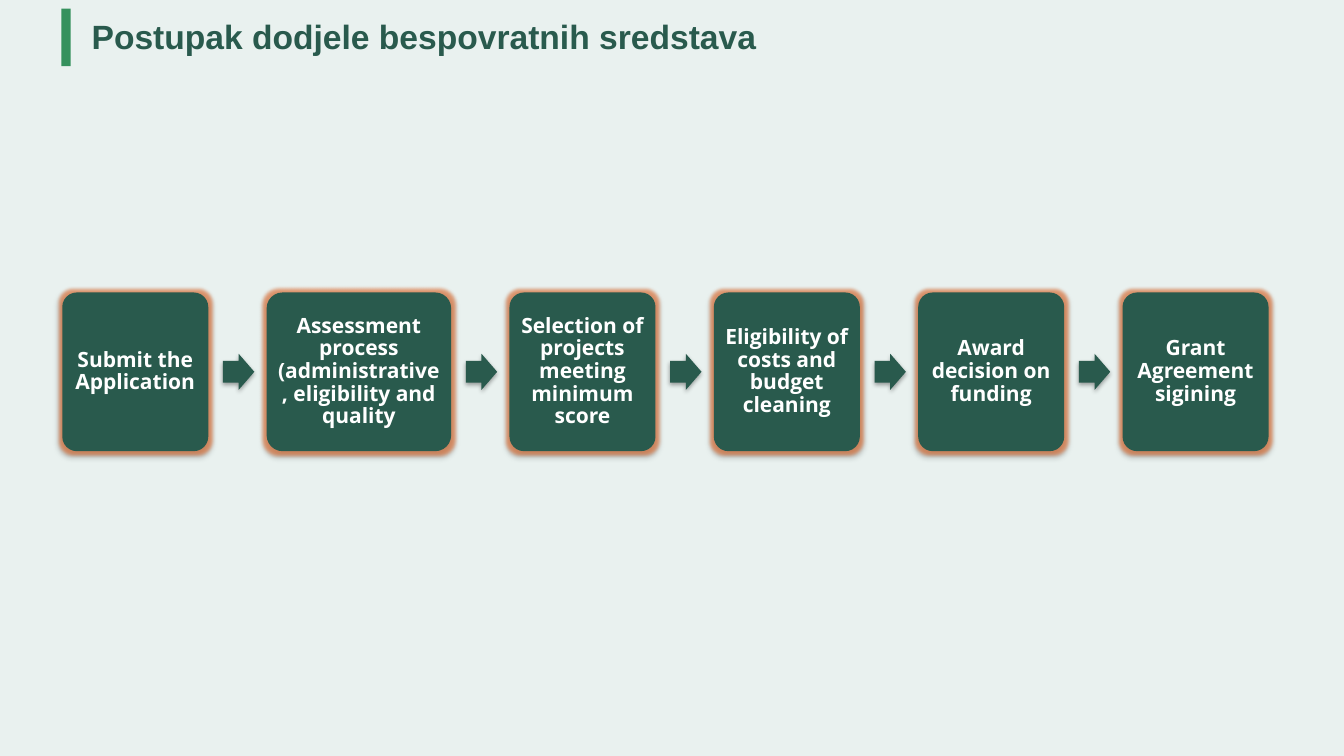
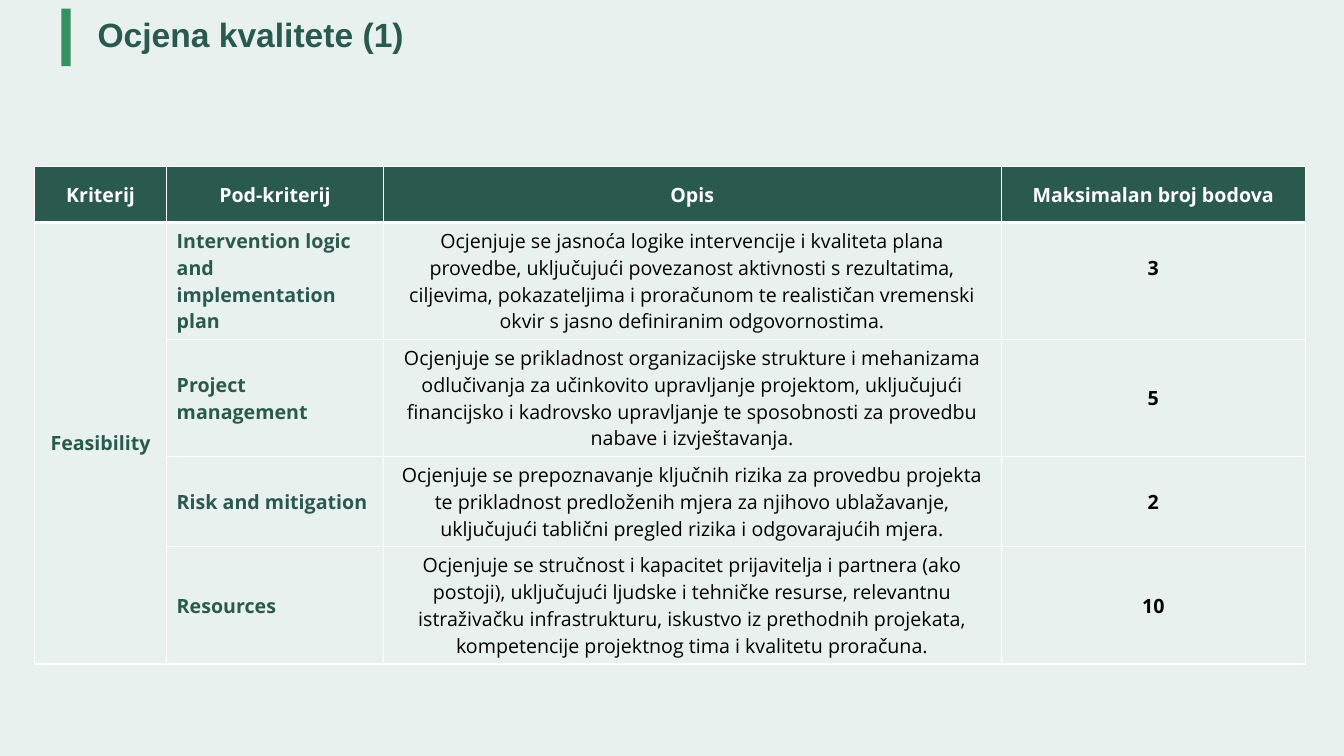
from lxml import etree
from pptx import Presentation
from pptx.dml.color import RGBColor
from pptx.enum import shapes, text
from pptx.oxml import ns
from pptx.util import Cm, Pt

PAPER = RGBColor(0xE9, 0xF1, 0xEF)
PINE = RGBColor(0x29, 0x5A, 0x4D)
GREEN = RGBColor(0x35, 0x91, 0x5D)
ORANGE = RGBColor(0xE9, 0x71, 0x32)
WHITE = RGBColor(0xFF, 0xFF, 0xFF)
BLACK = RGBColor(0, 0, 0)

TITLE_FONT, BODY_FONT = "Arial", "Open Sans"
CENTER, LEFT = text.PP_ALIGN.CENTER, text.PP_ALIGN.LEFT

STEPS = [
    "Submit the Application",
    "Assessment process (administrative, eligibility and quality",
    "Selection of projects meeting minimum score",
    "Eligibility of costs and budget cleaning",
    "Award decision on funding",
    "Grant Agreement sigining",
]
STEP_WIDTHS = [3.68, 4.65, 3.68, 3.68, 3.68, 3.68]

HEADINGS = ["Kriterij", "Pod-kriterij", "Opis", "Maksimalan broj bodova"]
CRITERION = "Feasibility"
SUBCRITERIA = [
    ("Intervention logic and implementation plan",
     "Ocjenjuje se jasnoća logike intervencije i kvaliteta plana provedbe, "
     "uključujući povezanost aktivnosti s rezultatima, ciljevima, pokazateljima "
     "i proračunom te realističan vremenski okvir s jasno definiranim "
     "odgovornostima.", "3"),
    ("Project management",
     "Ocjenjuje se prikladnost organizacijske strukture i mehanizama odlučivanja "
     "za učinkovito upravljanje projektom, uključujući financijsko i kadrovsko "
     "upravljanje te sposobnosti za provedbu nabave i izvještavanja.", "5"),
    ("Risk and mitigation",
     "Ocjenjuje se prepoznavanje ključnih rizika za provedbu projekta te "
     "prikladnost predloženih mjera za njihovo ublažavanje, uključujući tablični "
     "pregled rizika i odgovarajućih mjera.", "2"),
    ("Resources",
     "Ocjenjuje se stručnost i kapacitet prijavitelja i partnera (ako postoji), "
     "uključujući ljudske i tehničke resurse, relevantnu istraživačku "
     "infrastrukturu, iskustvo iz prethodnih projekata, kompetencije projektnog "
     "tima i kvalitetu proračuna.", "10"),
]
COLUMN_WIDTHS = [3.33, 5.46, 15.57, 7.67]
ROW_HEIGHTS = [1.42, 2.95, 2.95, 2.27, 2.95]


def add_xml(parent, tag, **attributes):
    element = etree.SubElement(parent, ns.qn(tag))
    for name, value in attributes.items():
        element.set(name, str(value))
    return element


def add_color(parent, color, alpha=100):
    value = add_xml(parent, "a:srgbClr", val=color)
    add_xml(value, "a:alpha", val=alpha * 1000)


def add_effects(shape, glow=False):
    """Give the shape a soft shadow below it and, on request, an orange glow."""
    effects = shape._element.spPr.find(ns.qn("a:effectLst"))
    if glow:
        add_color(add_xml(effects, "a:glow", rad=Pt(5)), ORANGE, 60)
    shadow = add_xml(effects, "a:outerShdw", blurRad=40000, dist=23000,
                     dir=5400000, rotWithShape=0)
    add_color(shadow, BLACK, 35)


def set_borders(cell, bottom, top):
    """Draw white cell borders; the fill must be set afterwards."""
    properties = cell._tc.get_or_add_tcPr()
    for side, width in (("L", 1), ("R", 1), ("T", top), ("B", bottom)):
        line = add_xml(properties, f"a:ln{side}", w=Pt(width))
        add_color(add_xml(line, "a:solidFill"), WHITE)


class Deck:
    def __init__(self):
        self.deck = Presentation()
        self.deck.slide_width, self.deck.slide_height = Cm(33.87), Cm(19.05)
        background = self.deck.slide_master.background.fill
        background.solid()
        background.fore_color.rgb = PAPER
        self.page = None

    def set_text(self, frame, words, size, color, align=LEFT, bold=True,
                 font=BODY_FONT, spacing=1.0):
        frame.word_wrap = True
        para = frame.paragraphs[0]
        para.text = words
        para.alignment = align
        para.line_spacing = spacing
        para.font.name, para.font.size = font, Pt(size)
        para.font.bold, para.font.color.rgb = bold, color

    def add_page(self, title, left, middle):
        """Start a slide with its accent bar and a title centred on middle."""
        self.page = self.deck.slides.add_slide(self.deck.slide_layouts[6])
        height = 1.4
        box = self.page.shapes.add_textbox(
            Cm(left), Cm(middle - height / 2), Cm(28), Cm(height))
        box.text_frame.vertical_anchor = text.MSO_ANCHOR.MIDDLE
        self.set_text(box.text_frame, title, 24, PINE, font=TITLE_FONT, spacing=0.9)
        self.add_shape(shapes.MSO_SHAPE.RECTANGLE, 1.55, 0.22, 0.23, 1.45, GREEN)

    def add_shape(self, kind, left, top, width, height, color, adjustments=()):
        shape = self.page.shapes.add_shape(
            kind, Cm(left), Cm(top), Cm(width), Cm(height))
        shape.shadow.inherit = False
        shape.fill.solid()
        shape.fill.fore_color.rgb = color
        shape.line.fill.background()
        for index, value in enumerate(adjustments):
            shape.adjustments[index] = value
        return shape

    def add_step(self, words, left, top, width, height):
        box = self.add_shape(shapes.MSO_SHAPE.ROUNDED_RECTANGLE,
                             left, top, width, height, PINE, [0.1])
        add_effects(box, glow=True)
        frame = box.text_frame
        frame.margin_left = frame.margin_right = Cm(0.15)
        frame.margin_top = frame.margin_bottom = Cm(0.15)
        frame.vertical_anchor = text.MSO_ANCHOR.MIDDLE
        self.set_text(frame, words, 15, WHITE, CENTER, spacing=0.9)

    def add_process(self, steps, widths, left, top, height, gap):
        """Place the steps in a row with an arrow in each gap."""
        arrow_width, arrow_height, arrow_offset = 0.79, 0.91, 0.37
        for index, (words, width) in enumerate(zip(steps, widths)):
            if index:
                arrow = self.add_shape(
                    shapes.MSO_SHAPE.RIGHT_ARROW, left - gap + arrow_offset,
                    top + (height - arrow_height) / 2,
                    arrow_width, arrow_height, PINE, [0.6, 0.5])
                add_effects(arrow)
            self.add_step(words, left, top, width, height)
            left += width + gap

    def add_cell(self, cell, words, color, align=CENTER, bold=True, header=False,
                 top_border=1):
        set_borders(cell, bottom=3 if header else 1, top=top_border)
        if header:
            cell.fill.solid()
            cell.fill.fore_color.rgb = PINE
        else:
            cell.fill.background()
        cell.vertical_anchor = text.MSO_ANCHOR.MIDDLE
        self.set_text(cell.text_frame, words, 14, color, align, bold)

    def add_criteria(self, left, top):
        rows, columns = len(ROW_HEIGHTS), len(COLUMN_WIDTHS)
        table = self.page.shapes.add_table(
            rows, columns, Cm(left), Cm(top), Cm(sum(COLUMN_WIDTHS)),
            Cm(sum(ROW_HEIGHTS))).table
        for column, width in zip(table.columns, COLUMN_WIDTHS):
            column.width = Cm(width)
        for row, height in zip(table.rows, ROW_HEIGHTS):
            row.height = Cm(height)
        for column, words in enumerate(HEADINGS):
            self.add_cell(table.cell(0, column), words, WHITE, header=True)
        for row, (name, description, points) in enumerate(SUBCRITERIA, 1):
            border = 3 if row == 1 else 1
            styles = [
                (CRITERION if row == 1 else "", PINE, CENTER, True),
                (name, PINE, LEFT, True),
                (description, BLACK, CENTER, False),
                (points, BLACK, CENTER, True),
            ]
            for column, style in enumerate(styles):
                self.add_cell(table.cell(row, column), *style, top_border=border)
        table.cell(1, 0).merge(table.cell(rows - 1, 0))
        # The first score sits half a line above the middle of its row.
        table.cell(1, columns - 1).margin_bottom = Cm(0.8)


def main():
    slides = Deck()
    slides.add_page("Postupak dodjele bespovratnih sredstava", 2.06, 0.98)
    slides.add_process(STEPS, STEP_WIDTHS, left=1.57, top=7.37, height=4, gap=1.47)
    slides.add_page("Ocjena kvalitete (1)", 2.21, 0.93)
    slides.add_criteria(left=0.87, top=4.19)
    slides.deck.save("out.pptx")


if __name__ == "__main__":
    main()
